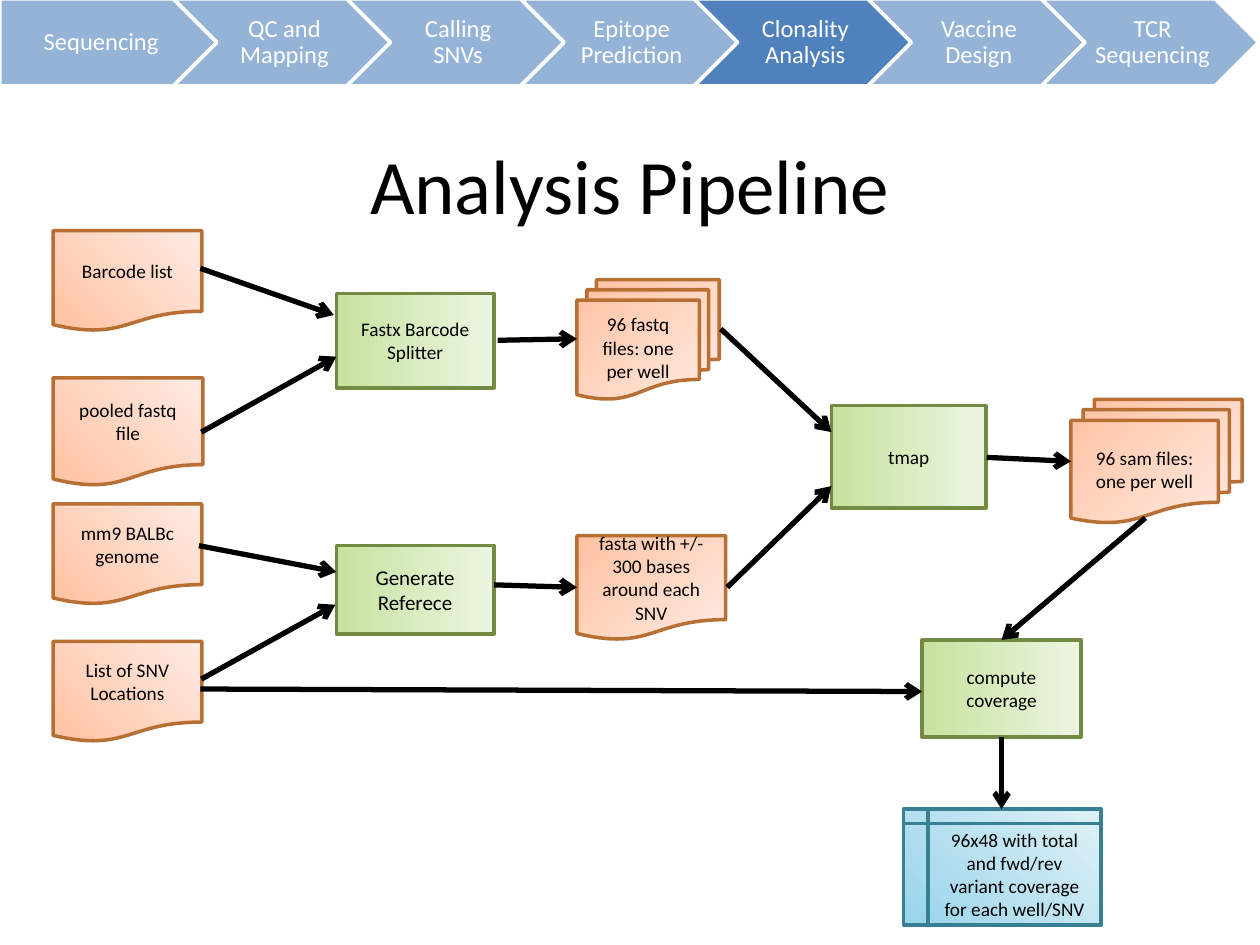
import dataclasses

import lxml.etree
import pptx
import pptx.dml.color
import pptx.enum.shapes
import pptx.enum.text
import pptx.oxml.ns
import pptx.util

SHAPE = pptx.enum.shapes.MSO_SHAPE
Cm = pptx.util.Cm
Pt = pptx.util.Pt


@dataclasses.dataclass(frozen=True)
class Palette:
    dark: str
    light: str
    outline: str


@dataclasses.dataclass(frozen=True)
class Theme:
    font: str = "Calibri"
    ink: str = "000000"
    paper: str = "FFFFFF"
    step: str = "95B3D7"
    current_step: str = "4F81BD"
    data: Palette = Palette("FFC1A1", "FFEBE3", "B76F34")
    process: Palette = Palette("C7E29E", "EDF5E2", "738A42")
    result: Palette = Palette("98D4EB", "E0F1F7", "377F92")
    title_size: int = 44
    step_size: int = 14
    node_size: int = 11
    large_node_size: int = 12
    outline_width: int = 2
    arrow_width: int = 3


def rgb(value):
    return pptx.dml.color.RGBColor.from_string(value)


class PipelineSlide:
    def __init__(self, slide, theme):
        self.slide = slide
        self.theme = theme

    def label(self, shape, text, size, color):
        frame = shape.text_frame
        frame.text = text
        frame.word_wrap = True
        frame.vertical_anchor = pptx.enum.text.MSO_ANCHOR.MIDDLE
        paragraph = frame.paragraphs[0]
        paragraph.alignment = pptx.enum.text.PP_ALIGN.CENTER
        font = paragraph.runs[0].font
        font.name = self.theme.font
        font.size = Pt(size)
        font.color.rgb = rgb(color)

    def shape(self, kind, box, outline):
        shape = self.slide.shapes.add_shape(kind, *map(Cm, box))
        shape.shadow.inherit = False
        shape.line.color.rgb = rgb(outline)
        shape.line.width = Pt(self.theme.outline_width)
        return shape

    def title(self, text, box):
        title = self.slide.shapes.title
        title.left, title.top, title.width, title.height = map(Cm, box)
        self.label(title, text, self.theme.title_size, self.theme.ink)

    def step(self, kind, text, box, fill, left_inset):
        step = self.shape(kind, box, self.theme.paper)
        step.fill.solid()
        step.fill.fore_color.rgb = rgb(fill)
        self.label(step, text, self.theme.step_size, self.theme.paper)
        frame = step.text_frame
        frame.margin_left, frame.margin_right = Cm(left_inset), Cm(0.05)
        frame.margin_top = frame.margin_bottom = Cm(0.1)
        frame.paragraphs[0].line_spacing = 0.9

    def node(self, kind, text, box, palette, angle, size=None):
        """Add a flowchart node; its gradient angle runs counter-clockwise."""
        node = self.shape(kind, box, palette.outline)
        node.fill.gradient()
        node.fill.gradient_angle = angle
        for stop, color in zip(node.fill.gradient_stops, (palette.dark, palette.light)):
            stop.color.rgb = rgb(color)
        self.label(node, text, size or self.theme.node_size, self.theme.ink)

    def document(self, text, box, angle=45):
        self.node(SHAPE.FLOWCHART_DOCUMENT, text, box, self.theme.data, angle)

    def file_stack(self, text, box):
        self.node(SHAPE.FLOWCHART_MULTIDOCUMENT, text, box, self.theme.data, 315)

    def process(self, text, box, size=None):
        self.node(SHAPE.FLOWCHART_PROCESS, text, box, self.theme.process, 0, size)

    def storage(self, text, box):
        self.node(SHAPE.FLOWCHART_INTERNAL_STORAGE, text, box, self.theme.result, 45)

    def arrow(self, *ends):
        arrow = self.slide.shapes.add_connector(
            pptx.enum.shapes.MSO_CONNECTOR.STRAIGHT, *map(Cm, ends))
        arrow.line.color.rgb = rgb(self.theme.ink)
        arrow.line.width = Pt(self.theme.arrow_width)
        qn = pptx.oxml.ns.qn
        properties = arrow._element.spPr
        lxml.etree.SubElement(properties.find(qn("a:ln")), qn("a:tailEnd"), type="arrow")
        lxml.etree.SubElement(properties, qn("a:effectLst"))


STEPS = ["Sequencing", "QC and Mapping", "Calling SNVs", "Epitope Prediction",
         "Clonality Analysis", "Vaccine Design", "TCR Sequencing"]
CURRENT_STEP = "Clonality Analysis"
STEP_PITCH = 3.5

INPUTS = [
    ("Barcode list", (1.07, 4.65, 3, 2.03)),
    ("pooled fastq file", (1.07, 7.62, 3.02, 2.18)),
    ("mm9 BALBc genome", (1.07, 10.16, 3, 2.03)),
    ("List of SNV Locations", (1.07, 12.93, 3, 2.03)),
]

PROCESSES = [
    ("Fastx Barcode Splitter", (6.78, 5.92, 3.18, 1.9)),
    ("tmap", (16.76, 8.18, 3.12, 2.06)),
    ("compute coverage", (18.59, 12.9, 3.2, 1.96)),
]

FILE_STACKS = [
    ("96 fastq files: one per well", (11.63, 5.64, 2.87, 2.41)),
    ("96 sam files: one per well", (21.59, 8.05, 3.45, 2.49)),
]

ARROWS = [
    (4.04, 5.41, 6.73, 6.35),      # barcode list to splitter
    (4.06, 8.71, 6.78, 7.19),      # pooled fastq to splitter
    (4.01, 11, 6.78, 11.53),       # genome to reference
    (4.06, 13.69, 6.76, 12.19),    # SNV list to reference
    (4.04, 13.89, 18.59, 13.94),   # SNV list to coverage
    (10.03, 6.86, 11.63, 6.83),    # splitter to fastq files
    (9.96, 11.79, 11.63, 11.84),   # reference to fasta
    (14.53, 6.63, 16.76, 8.71),    # fastq files to tmap
    (14.66, 11.84, 16.76, 9.8),    # fasta to tmap
    (19.89, 9.22, 21.59, 9.3),     # tmap to sam files
    (23.09, 10.44, 20.19, 12.9),   # sam files to coverage
    (20.19, 14.86, 20.19, 16.31),  # coverage to result
]


def main():
    presentation = pptx.Presentation()
    presentation.slide_width, presentation.slide_height = Cm(25.4), Cm(19.05)
    theme = Theme()
    title_only = presentation.slide_layouts[5]
    pipeline = PipelineSlide(presentation.slides.add_slide(title_only), theme)

    pipeline.title("Analysis Pipeline", (1.27, 2.11, 22.86, 3.18))
    for text, box in INPUTS:
        pipeline.document(text, box)
    pipeline.document("fasta with +/- 300 bases around each SNV",
                      (11.63, 10.8, 3, 2.11), angle=315)
    for text, box in PROCESSES:
        pipeline.process(text, box)
    pipeline.process("Generate Referece", (6.78, 11, 3.18, 1.78), theme.large_node_size)
    for text, box in FILE_STACKS:
        pipeline.file_stack(text, box)
    pipeline.storage("96x48 with total and fwd/rev variant coverage for each well/SNV",
                     (18.21, 16.31, 3.99, 2.34))
    for ends in ARROWS:
        pipeline.arrow(*ends)

    for index, text in enumerate(STEPS):
        kind, left_inset = (SHAPE.CHEVRON, 0.15) if index else (SHAPE.PENTAGON, 0.2)
        fill = theme.current_step if text == CURRENT_STEP else theme.step
        pipeline.step(kind, text, (index * STEP_PITCH, -0.02, 4.37, 1.75), fill, left_inset)

    presentation.save("out.pptx")


if __name__ == "__main__":
    main()
